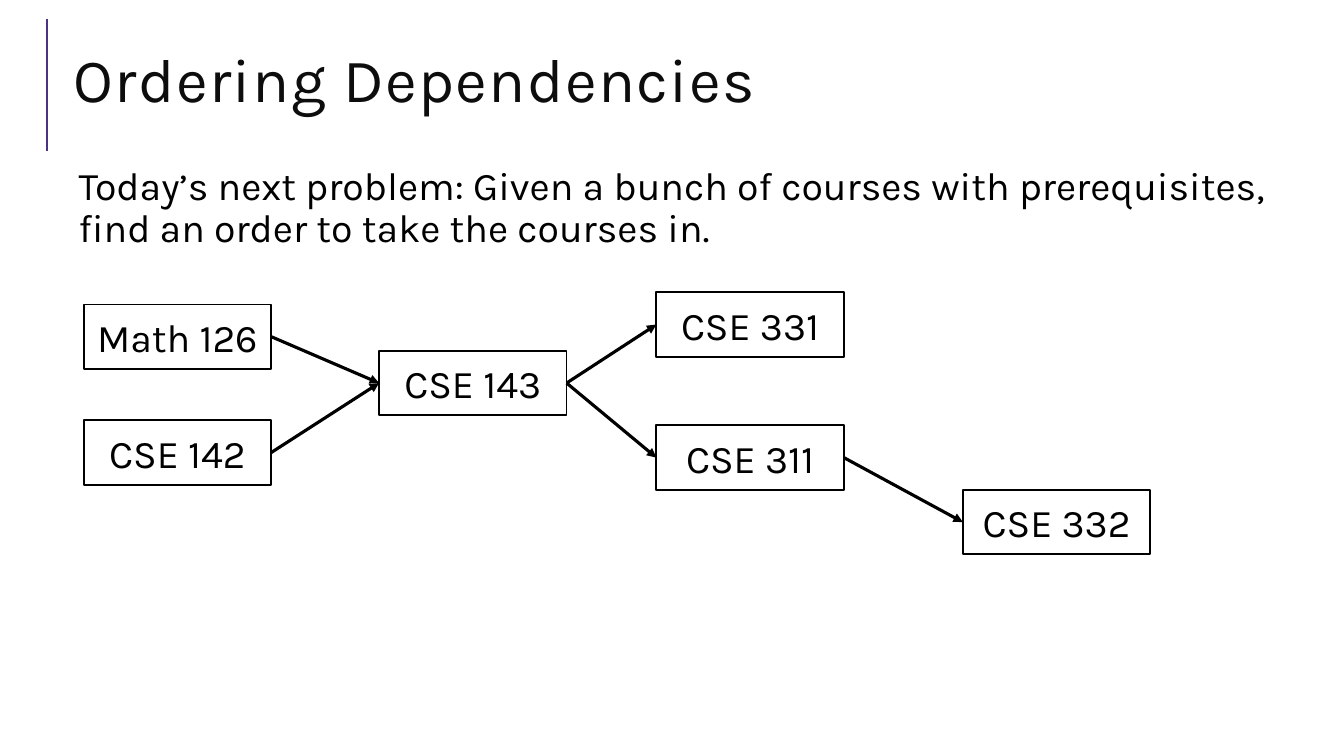
from lxml.etree import SubElement
from pptx import Presentation
from pptx.dml.color import RGBColor
from pptx.enum.shapes import MSO_CONNECTOR, MSO_SHAPE
from pptx.enum.text import MSO_ANCHOR, MSO_AUTO_SIZE, PP_ALIGN
from pptx.oxml.ns import qn
from pptx.util import Inches, Pt

FONT = "Karla"
BLACK = "000000"
TOP, LEFT, BOTTOM, RIGHT = range(4)
COURSE_WIDTH, COURSE_HEIGHT = 1.86, 0.64
COURSES = {
    "Math 126": (0, 0.12),
    "CSE 142": (0, 1.27),
    "CSE 143": (2.93, 0.58),
    "CSE 311": (5.68, 1.32),
    "CSE 331": (5.68, 0),
    "CSE 332": (8.72, 1.96),
}
PREREQUISITES = [
    ("Math 126", "CSE 143"),
    ("CSE 142", "CSE 143"),
    ("CSE 143", "CSE 331"),
    ("CSE 143", "CSE 311"),
    ("CSE 311", "CSE 332"),
]


def color(value):
    return RGBColor.from_string(value)


def write_text(shape, text, size=28, fill=BLACK, align=PP_ALIGN.LEFT,
               anchor=MSO_ANCHOR.MIDDLE, line_spacing=1.0, before=0, after=0,
               letter_spacing=0):
    frame = shape.text_frame
    frame.word_wrap = True
    frame.auto_size = MSO_AUTO_SIZE.NONE
    frame.vertical_anchor = anchor
    paragraph = frame.paragraphs[0]
    paragraph.alignment = align
    paragraph.line_spacing = line_spacing
    paragraph.space_before = Pt(before)
    paragraph.space_after = Pt(after)
    run = paragraph.add_run()
    run.text = text
    run.font.name = FONT
    run.font.size = Pt(size)
    run.font.color.rgb = color(fill)
    if letter_spacing:
        run.font._element.set("spc", str(letter_spacing * 100))
    return paragraph


def add_line(slide, start, end, stroke, width, arrow=False):
    connector = slide.shapes.add_connector(
        MSO_CONNECTOR.STRAIGHT, *map(Inches, start + end))
    connector.line.color.rgb = color(stroke)
    connector.line.width = Pt(width)
    if arrow:
        SubElement(connector.line._get_or_add_ln(), qn("a:tailEnd"), type="triangle")
    SubElement(connector._element.spPr, qn("a:effectLst"))
    return connector


def add_heading(slide, left, top, width, height):
    add_line(slide, (left - 0.16, top - 0.1), (left - 0.16, top + 1.21), "4C3282", 1.5)
    title = slide.shapes.title
    title.left, title.top = Inches(left), Inches(top)
    title.width, title.height = Inches(width), Inches(height)
    write_text(title, "Ordering Dependencies", size=44, fill="0D0D0D",
               line_spacing=0.8, letter_spacing=1)


def add_problem(slide, left, top, width, height):
    box = slide.shapes.add_textbox(*map(Inches, (left, top, width, height)))
    frame = box.text_frame
    frame.margin_left = Inches(0.15)
    frame.margin_top = frame.margin_right = frame.margin_bottom = Inches(0.05)
    write_text(box, "Today’s next problem: Given a bunch of courses with "
               "prerequisites, find an order to take the courses in.",
               anchor=MSO_ANCHOR.TOP, line_spacing=0.9, before=12, after=2)


def add_course(slide, name, left, top):
    course = slide.shapes.add_shape(
        MSO_SHAPE.RECTANGLE,
        *map(Inches, (left, top, COURSE_WIDTH, COURSE_HEIGHT)))
    course.shadow.inherit = False
    course.fill.solid()
    course.fill.fore_color.rgb = color("FFFFFF")
    course.line.color.rgb = color(BLACK)
    course.line.width = Pt(1.25)
    write_text(course, name, align=PP_ALIGN.CENTER)
    return course


def add_course_graph(slide, left, top):
    courses = {name: add_course(slide, name, left + x, top + y)
               for name, (x, y) in COURSES.items()}
    for earlier, later in PREREQUISITES:
        arrow = add_line(slide, (left, top), (left, top), BLACK, 2.25, arrow=True)
        arrow.begin_connect(courses[earlier], RIGHT)
        arrow.end_connect(courses[later], LEFT)


def main():
    presentation = Presentation()
    presentation.slide_width = Inches(13.33)
    presentation.slide_height = Inches(7.5)
    slide = presentation.slides.add_slide(presentation.slide_layouts[5])
    add_heading(slide, 0.63, 0.29, 12.23, 1.11)
    add_problem(slide, 0.63, 1.6, 12.23, 0.87)
    add_course_graph(slide, 0.83, 2.9)
    presentation.save("out.pptx")


if __name__ == "__main__":
    main()
